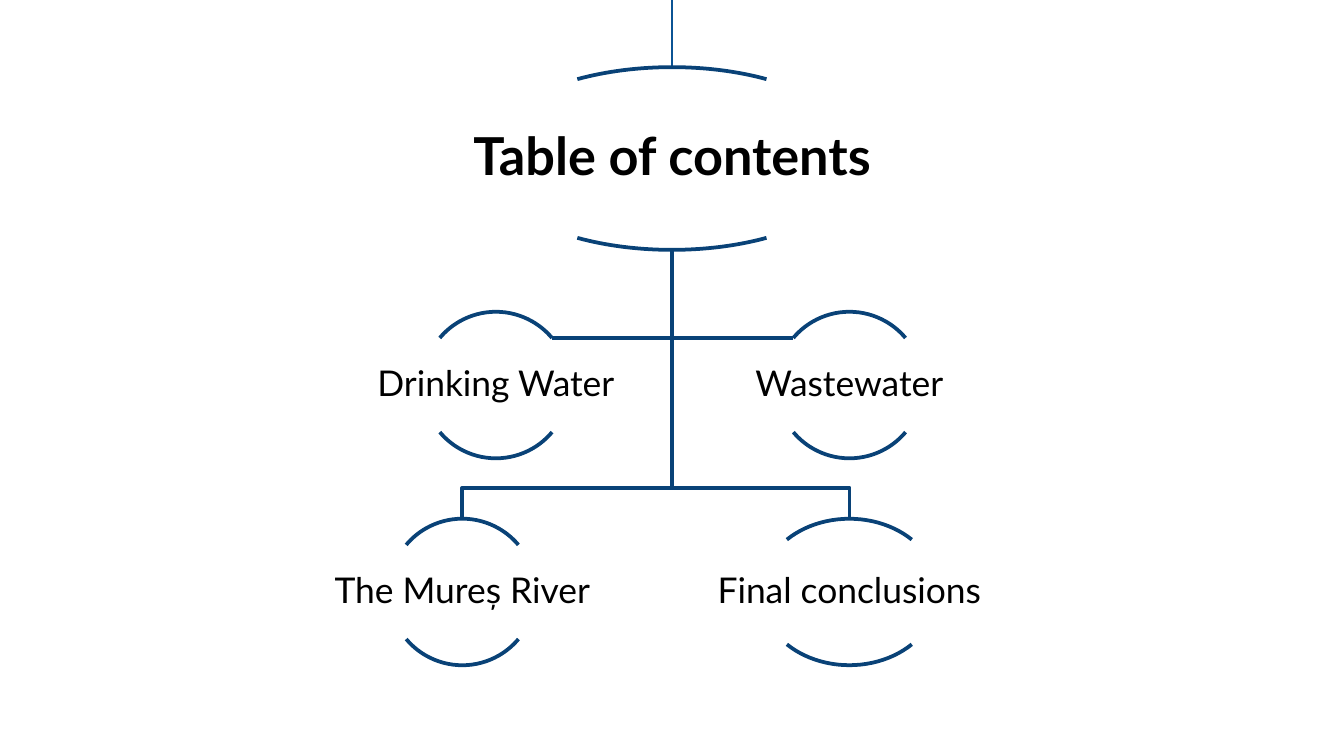
from math import cos, radians, sin

from lxml import etree
from pptx import Presentation
from pptx.dml.color import RGBColor
from pptx.enum.shapes import MSO_CONNECTOR, MSO_SHAPE
from pptx.enum.text import MSO_ANCHOR, PP_ALIGN
from pptx.oxml.ns import qn
from pptx.util import Inches, Pt

COLORS = {"branch": "094277", "stem": "0B5394", "text": "000000"}
FONT = "Lato"
SLIDE_WIDTH = 10

TITLE = ("Table of contents", 5, 0.5, 2.84, 1.36)
ASIDES = [
    ("Drinking Water", 3.69, 2.32, 1.09, 1.09),
    ("Wastewater", 6.32, 2.32, 1.09, 1.09),
]
CHAPTERS = [
    ("The Mureș River", 3.44, 3.86, 1.09, 1.09),
    ("Final conclusions", 6.32, 3.86, 1.33, 1.09),
]
ARCS = [(132, 192), (24, 84)]
ARC_END = radians(40)
TEXT_WIDTH, TEXT_HEIGHT = 2, 0.64
BAR_GAP = 0.23


def style_line(line, color, width):
    line.color.rgb = RGBColor.from_string(COLORS[color])
    line.width = Pt(width)


def add_stem(slide, x, bottom):
    stem = slide.shapes.add_connector(
        MSO_CONNECTOR.STRAIGHT, Inches(x), Inches(0), Inches(x), Inches(bottom))
    style_line(stem.line, "stem", 1.5)
    etree.SubElement(stem._element.spPr, qn("a:effectLst"))


def add_branch(slide, points):
    start, *rest = [(Inches(x), Inches(y)) for x, y in points]
    builder = slide.shapes.build_freeform(*start, scale=1.0)
    builder.add_line_segments(rest, close=False)
    branch = builder.convert_to_shape()
    branch.shadow.inherit = False
    branch.fill.background()
    style_line(branch.line, "branch", 2)


def add_topic(slide, topic, size, bold=False, inset=0.01):
    label, center, top, width, height = topic
    for angles in ARCS:
        arc = slide.shapes.add_shape(
            MSO_SHAPE.ARC, Inches(center - width / 2), Inches(top),
            Inches(width), Inches(height))
        arc.adjustments[0], arc.adjustments[1] = angles
        arc.shadow.inherit = False
        arc.fill.background()
        style_line(arc.line, "branch", 2)

    text_width, text_height = width * TEXT_WIDTH, height * TEXT_HEIGHT
    box = slide.shapes.add_textbox(
        Inches(center - text_width / 2), Inches(top + (height - text_height) / 2),
        Inches(text_width), Inches(text_height))
    frame = box.text_frame
    frame.word_wrap = True
    frame.vertical_anchor = MSO_ANCHOR.MIDDLE
    frame.margin_left = frame.margin_right = Inches(inset)
    frame.margin_top = frame.margin_bottom = Inches(inset)
    paragraph = frame.paragraphs[0]
    paragraph.alignment = PP_ALIGN.CENTER
    paragraph.line_spacing = 0.9
    run = paragraph.add_run()
    run.text = label
    run.font.name = FONT
    run.font.size = Pt(size)
    run.font.bold = bold
    run.font.color.rgb = RGBColor.from_string(COLORS["text"])


def main():
    deck = Presentation()
    deck.slide_width = Inches(SLIDE_WIDTH)
    deck.slide_height = Inches(SLIDE_WIDTH * 9 / 16)
    slide = deck.slides.add_slide(deck.slide_layouts[6])

    _, trunk, title_top, _, title_height = TITLE
    root = (trunk, title_top + title_height)
    add_stem(slide, trunk, title_top)

    for _, center, top, width, height in ASIDES:
        side = 1 if center < trunk else -1
        x = center + side * width / 2 * cos(ARC_END)
        y = top + height / 2 * (1 - sin(ARC_END))
        add_branch(slide, [root, (trunk, y), (x, y)])
    for _, center, top, _, _ in CHAPTERS:
        bar = top - BAR_GAP
        add_branch(slide, [root, (trunk, bar), (center, bar), (center, top)])

    add_topic(slide, TITLE, 28, bold=True, inset=0.02)
    for topic in CHAPTERS + ASIDES:
        add_topic(slide, topic, 19)

    deck.save("out.pptx")


if __name__ == "__main__":
    main()
